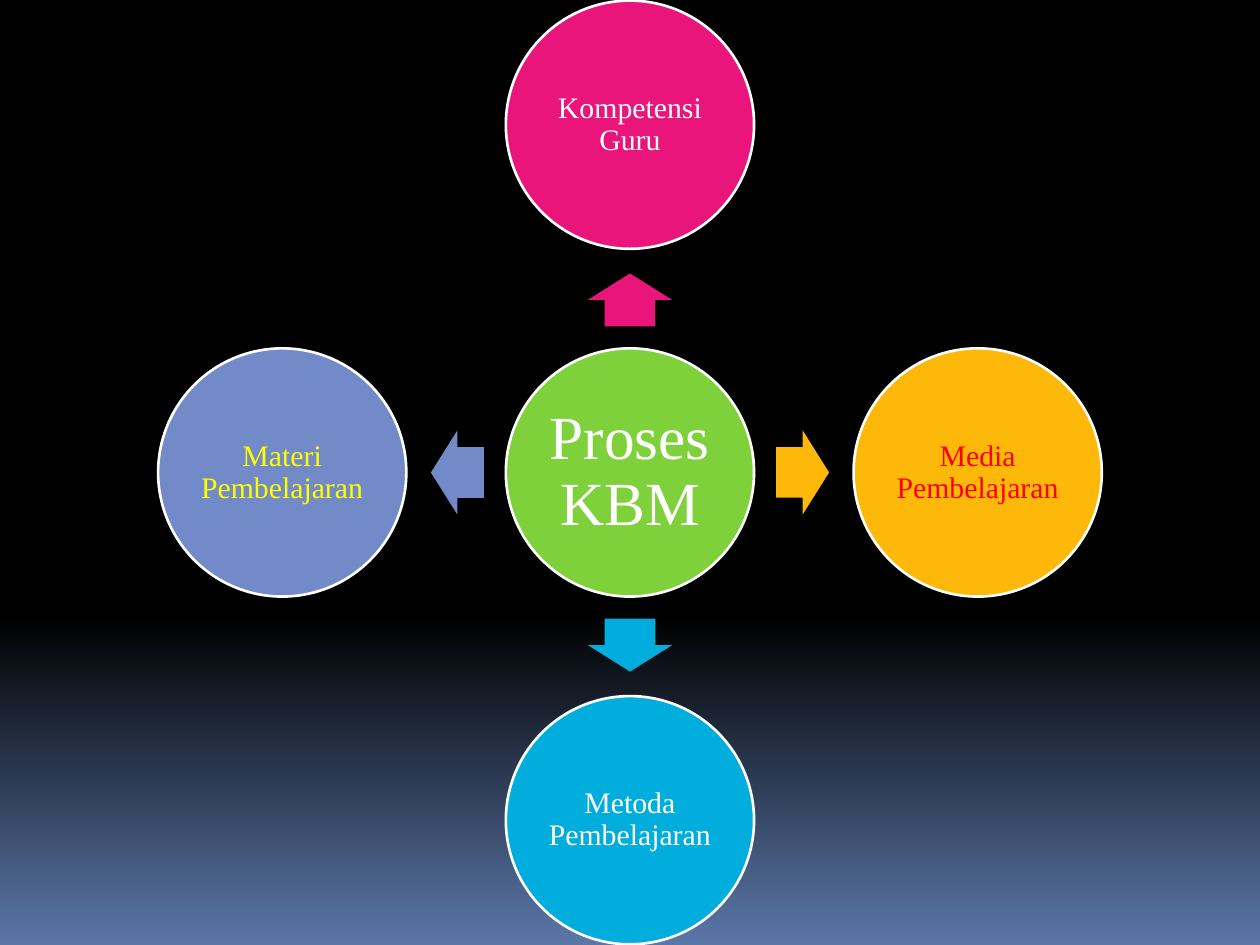
from dataclasses import dataclass
from math import cos, radians, sin

from pptx import Presentation
from pptx.dml.color import RGBColor as RGB
from pptx.enum.shapes import MSO_SHAPE as Shape
from pptx.enum.text import MSO_ANCHOR as Anchor, PP_ALIGN as Align
from pptx.util import Inches, Pt

WIDTH, HEIGHT = 10, 7.5
DIAMETER = 1.97
CIRCLE_STEP, ARROW_STEP = 2.76, 1.37
ARROW_LENGTH, ARROW_WIDTH = 0.42, 0.67


@dataclass(frozen=True)
class Theme:
    """Colours, font and type sizes of the slide."""
    font: str = "Times New Roman"
    hub_size: int = 35
    factor_size: int = 17
    white: str = "FFFFFF"
    red: str = "FF0000"
    yellow: str = "FFFF00"
    green: str = "7FD13B"
    pink: str = "EA157A"
    amber: str = "FEB80A"
    cyan: str = "00ADDC"
    blue: str = "738AC8"
    backdrop: tuple = ((0.65, "000000"), (1, "5B77A8"))


THEME = Theme()
FACTORS = (
    (270, "Kompetensi Guru", THEME.pink, THEME.white),
    (0, "Media Pembelajaran", THEME.amber, THEME.red),
    (90, "Metoda Pembelajaran", THEME.cyan, THEME.white),
    (180, "Materi Pembelajaran", THEME.blue, THEME.yellow),
)


def apply_format(target, values):
    """Set each attribute named in values on the target."""
    for name, value in values.items():
        setattr(target, name, value)


def paint_background(slide):
    """Fade the slide from black down to blue."""
    fill = slide.background.fill
    fill.gradient()
    fill.gradient_angle = 270
    for stop, (position, colour) in zip(fill.gradient_stops, THEME.backdrop):
        stop.position = position
        stop.color.rgb = RGB.from_string(colour)


def add_centred(group, kind, angle, step, size, colour):
    """Add a filled shape at a polar offset from the slide's centre."""
    width, height = size
    left = WIDTH / 2 + step * cos(radians(angle)) - width / 2
    top = HEIGHT / 2 + step * sin(radians(angle)) - height / 2
    shape = group.shapes.add_shape(kind, *map(Inches, (left, top, width, height)))
    shape.shadow.inherit = False
    shape.fill.solid()
    shape.fill.fore_color.rgb = RGB.from_string(colour)
    return shape


def add_circle(group, angle, step, text, colour, text_colour, size, inset):
    """Add an outlined circle with its label inside."""
    shape = add_centred(group, Shape.OVAL, angle, step, (DIAMETER, DIAMETER), colour)
    shape.line.color.rgb = RGB.from_string(THEME.white)
    shape.line.width = Pt(1.5)
    frame = shape.text_frame
    sides = ("left", "top", "right", "bottom")
    apply_format(frame, {f"margin_{side}": Inches(inset) for side in sides})
    apply_format(frame, {"word_wrap": True, "vertical_anchor": Anchor.MIDDLE})
    paragraph = frame.paragraphs[0]
    apply_format(paragraph, {"alignment": Align.CENTER, "line_spacing": 0.9})
    run = paragraph.add_run()
    run.text = text
    apply_format(run.font, {"name": THEME.font, "size": Pt(size)})
    run.font.color.rgb = RGB.from_string(text_colour)


def add_arrow(group, angle, colour):
    """Add a block arrow that points outwards from the centre."""
    size = (ARROW_LENGTH, ARROW_WIDTH)
    shape = add_centred(group, Shape.RIGHT_ARROW, angle, ARROW_STEP, size, colour)
    shape.line.fill.background()
    shape.rotation = angle
    shape.adjustments[0], shape.adjustments[1] = 0.6, 0.5


def main():
    """Build the radial diagram and save it."""
    presentation = Presentation()
    apply_format(presentation, {"slide_width": Inches(WIDTH), "slide_height": Inches(HEIGHT)})
    slide = presentation.slides.add_slide(presentation.slide_layouts[6])
    paint_background(slide)
    group = slide.shapes.add_group_shape()
    add_circle(group, 0, 0, "Proses KBM", THEME.green, THEME.white, THEME.hub_size, 0.05)
    for angle, text, colour, text_colour in FACTORS:
        add_arrow(group, angle, colour)
        add_circle(group, angle, CIRCLE_STEP, text, colour, text_colour, THEME.factor_size, 0.02)
    presentation.save("out.pptx")


if __name__ == "__main__":
    main()
